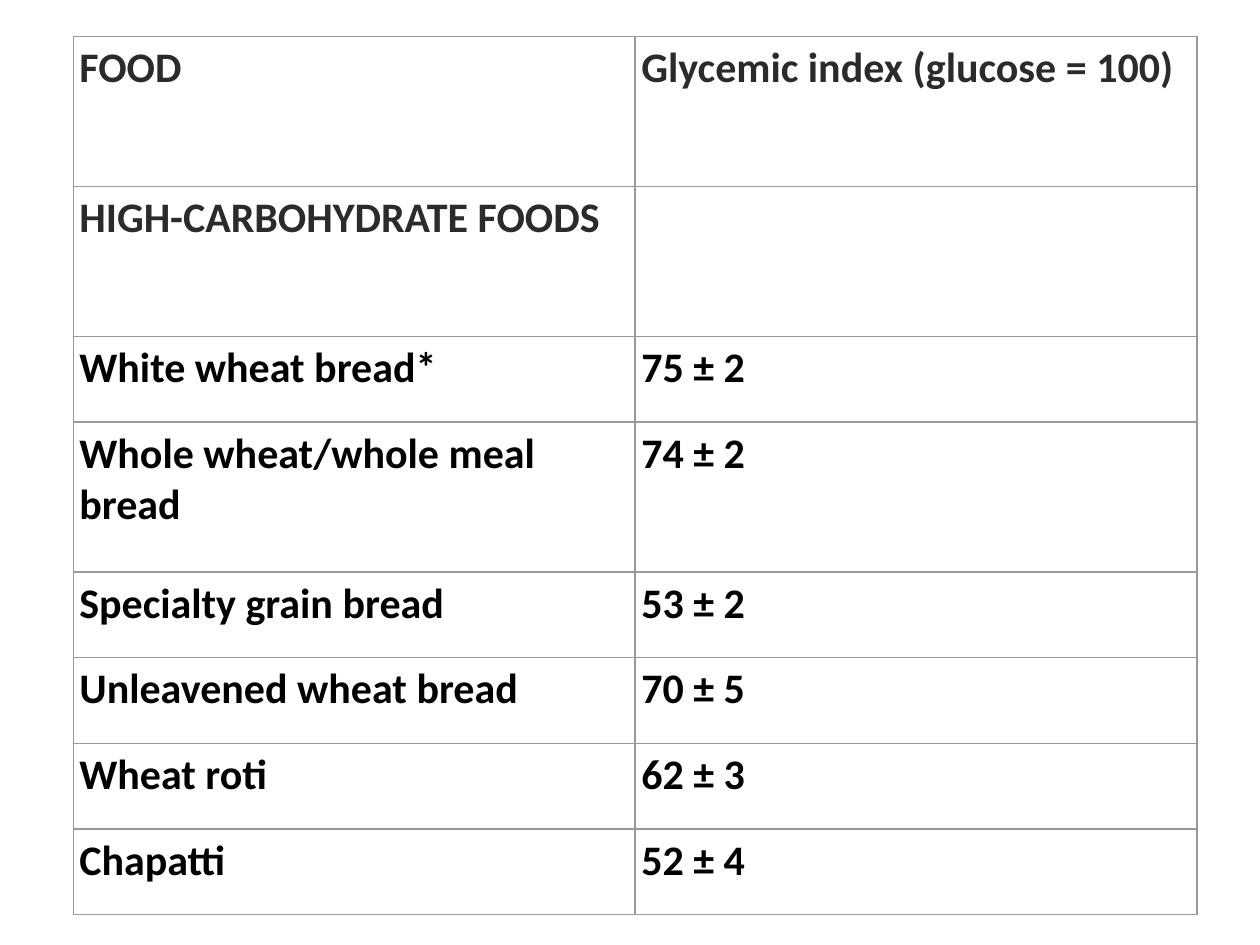
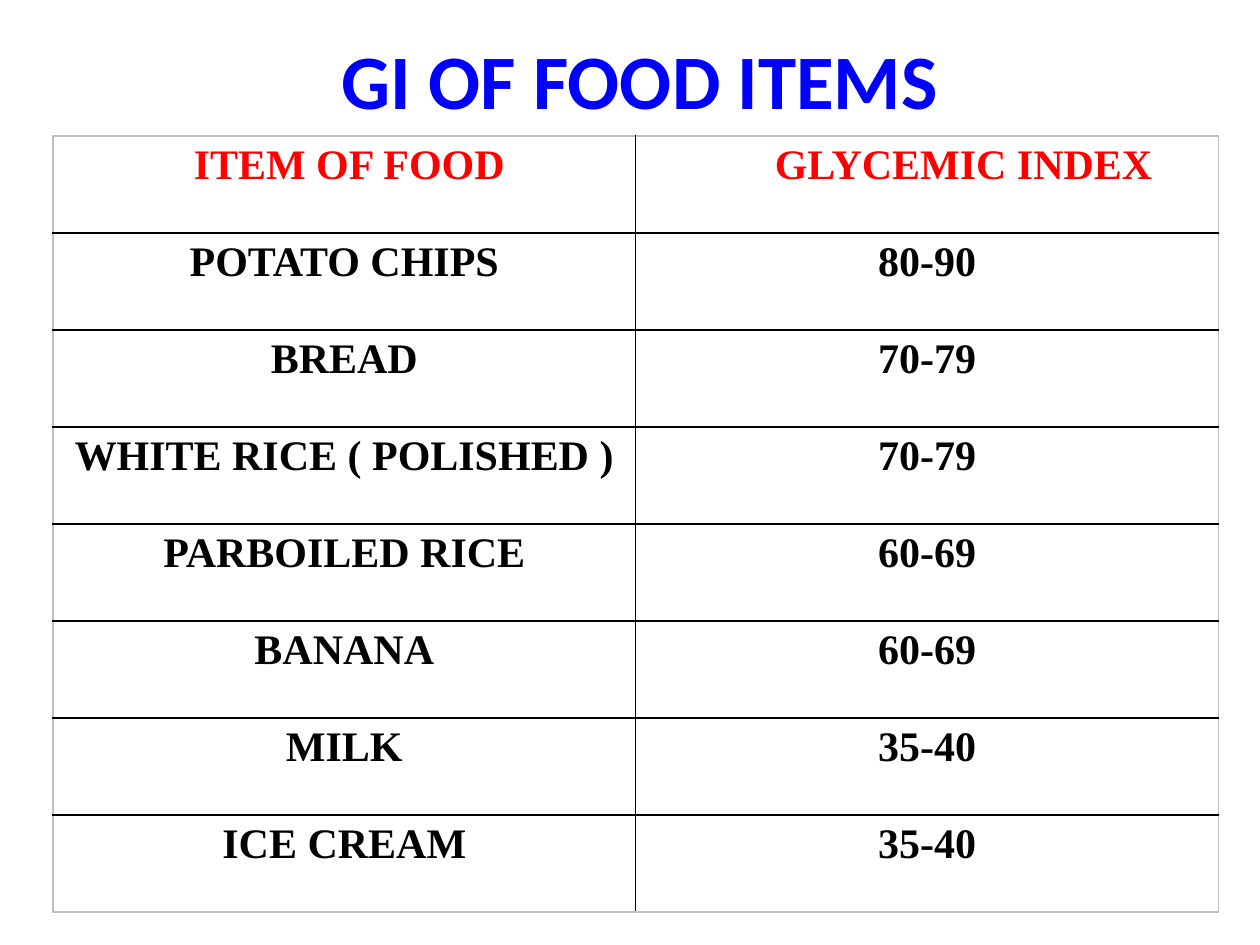
import pptx
import pptx.util
import pptx.dml.color
import pptx.enum.text
import pptx.oxml
import pptx.oxml.ns

Inches = pptx.util.Inches
PP_ALIGN = pptx.enum.text.PP_ALIGN
WHITE, BLACK, INK, RED, BLUE = "FFFFFF", "000000", "2B2B2B", "FF0000", "0000FF"
GRID, FRAME = "999999", "BFBFBF"


def style_run(paragraph, text, font, size, color):
    run = paragraph.add_run()
    run.text = text
    run.font.name = font
    run.font.size = pptx.util.Pt(size)
    run.font.bold = True
    run.font.color.rgb = pptx.dml.color.RGBColor.from_string(color)


def add_food_table(slide, rows, left, top, column_width, heights, font, header_rows,
                   header_color, align, margins, inner, outer, line_width):
    frame = slide.shapes.add_table(len(rows), 2, Inches(left), Inches(top),
                                   Inches(2 * column_width), Inches(sum(heights)))
    table = frame.table
    table.first_row = False
    table.horz_banding = False
    for column in table.columns:
        column.width = Inches(column_width)
    for r, entries in enumerate(rows):
        table.rows[r].height = Inches(heights[r])
        for c, text in enumerate(entries):
            cell = table.cell(r, c)
            cell.margin_left = cell.margin_right = Inches(margins[0])
            cell.margin_top = cell.margin_bottom = Inches(margins[1])
            edges = {"lnL": c == 0, "lnR": c == 1, "lnT": r == 0, "lnB": r == len(rows) - 1}
            for edge, on_frame in edges.items():
                cell._tc.get_or_add_tcPr().append(pptx.oxml.parse_xml(
                    f'<a:{edge} {pptx.oxml.ns.nsdecls("a")} w="{int(line_width * 12700)}">'
                    f'<a:solidFill><a:srgbClr val="{outer if on_frame else inner}"/></a:solidFill>'
                    f'</a:{edge}>'))
            cell.fill.solid()
            cell.fill.fore_color.rgb = pptx.dml.color.RGBColor.from_string(WHITE)
            paragraph = cell.text_frame.paragraphs[0]
            paragraph.alignment = align
            if text:
                style_run(paragraph, text, font, 24, header_color if r < header_rows else BLACK)
    return table


deck = pptx.Presentation()
deck.slide_width = Inches(10)
deck.slide_height = Inches(7.5)

carbohydrate_foods = [
    ("FOOD", "Glycemic index (glucose = 100)"),
    ("HIGH-CARBOHYDRATE FOODS", ""),
    ("White wheat bread*", "75 ± 2"),
    ("Whole wheat/whole meal bread", "74 ± 2"),
    ("Specialty grain bread", "53 ± 2"),
    ("Unleavened wheat bread", "70 ± 5"),
    ("Wheat roti", "62 ± 3"),
    ("Chapatti", "52 ± 4"),
]
tall_rows = (0, 1, 3)
carbohydrate_heights = [1.19 if r in tall_rows else 0.68 for r in range(len(carbohydrate_foods))]
carbohydrate_slide = deck.slides.add_slide(deck.slide_layouts[6])
add_food_table(carbohydrate_slide, carbohydrate_foods, 0.58, 0.29, 4.46, carbohydrate_heights,
               "Calibri", 2, INK, PP_ALIGN.LEFT, (0.05, 0.05), GRID, GRID, 0.75)

food_items = [
    ("ITEM OF FOOD", "GLYCEMIC INDEX"),
    ("POTATO CHIPS", "80-90"),
    ("BREAD", "70-79"),
    ("WHITE RICE ( POLISHED )", "70-79"),
    ("PARBOILED RICE", "60-69"),
    ("BANANA", "60-69"),
    ("MILK", "35-40"),
    ("ICE CREAM", "35-40"),
]
items_slide = deck.slides.add_slide(deck.slide_layouts[5])
heading = items_slide.shapes.title
heading.left, heading.top = Inches(0.58), Inches(0)
heading.width, heading.height = Inches(9), Inches(1.25)
heading.text_frame.vertical_anchor = pptx.enum.text.MSO_ANCHOR.MIDDLE
heading_line = heading.text_frame.paragraphs[0]
heading_line.alignment = PP_ALIGN.CENTER
style_run(heading_line, "GI OF FOOD ITEMS", "Calibri", 44, BLUE)

items_table = add_food_table(items_slide, food_items, 0.42, 1.08, 4.625, [0.77] * len(food_items),
                             "Times New Roman", 1, RED, PP_ALIGN.CENTER, (0.1, 0.05),
                             BLACK, FRAME, 1)
for c, indent in enumerate((0.18, 0.68)):
    items_table.cell(0, c).margin_left = Inches(indent)

deck.save("out.pptx")
